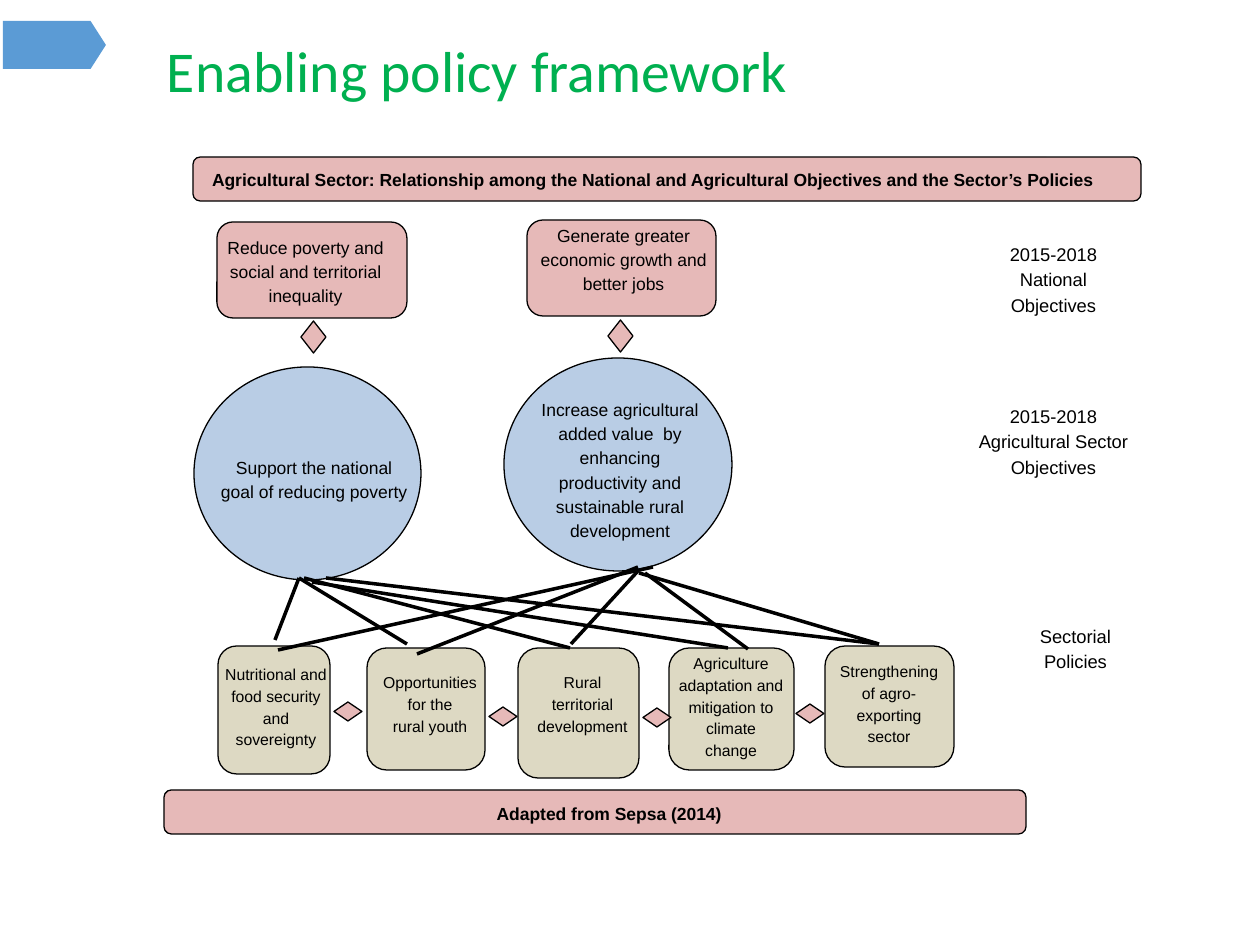
from dataclasses import dataclass

from pptx import Presentation
from pptx import util as u
from pptx.dml.color import RGBColor
from pptx.enum import shapes as sh, text as tx
from pptx.oxml.ns import qn

SCALE = 914400 / 126  # EMU in one px
ROSE, BLUE, SAND, BLACK = "E6B9B8", "B9CDE5", "DDD9C3", "000000"
ROUND = sh.MSO_SHAPE.ROUNDED_RECTANGLE
OVAL = sh.MSO_SHAPE.OVAL
DIAMOND = sh.MSO_SHAPE.DIAMOND

Rect = tuple[int, int, int, int]


@dataclass
class Node:
    kind: int
    fill: str
    at: Rect
    box: Rect
    words: list[str]
    size: float = 10
    bold: bool = False
    wrap: bool = False
    align: tx.PP_ALIGN = tx.PP_ALIGN.CENTER


@dataclass
class Label:
    box: Rect
    words: list[str]


def px(n: int) -> u.Emu:
    return u.Emu(round(n * SCALE))


def place(at: Rect) -> list[u.Emu]:
    return [px(n) for n in at]


def tint(code: str) -> RGBColor:
    return RGBColor.from_string(code)


def write(frame, words: list[str], *, size: float, font="Arial", color=BLACK,
          bold=False, align=tx.PP_ALIGN.CENTER, wrap=True, lead=1.15, inset=(0, 0)) -> None:
    frame.word_wrap = wrap
    frame.auto_size = tx.MSO_AUTO_SIZE.NONE
    frame.vertical_anchor = tx.MSO_ANCHOR.TOP
    frame.margin_left = frame.margin_right = px(inset[0])
    frame.margin_top = frame.margin_bottom = px(inset[1])
    for i, line in enumerate(words):
        para = frame.add_paragraph() if i else frame.paragraphs[0]
        para.text = line
        para.alignment = align
        para.line_spacing = lead
        para.font.name = font
        para.font.size = u.Pt(size)
        para.font.bold = bold
        para.font.color.rgb = tint(color)


def draw(slide, kind: int, at: Rect, fill: str, edge: bool = True):
    shape = slide.shapes.add_shape(kind, *place(at))
    shape.shadow.inherit = False
    shape.fill.solid()
    shape.fill.fore_color.rgb = tint(fill)
    if edge:
        shape.line.color.rgb = tint(BLACK)
        shape.line.width = u.Pt(0)
    else:
        shape.line.fill.background()
    return shape


def add_node(slide, node: Node) -> None:
    draw(slide, node.kind, node.at, node.fill)
    box = slide.shapes.add_textbox(*place(node.box))
    write(box.text_frame, node.words, size=node.size, bold=node.bold,
          wrap=node.wrap, align=node.align)


def add_label(slide, label: Label) -> None:
    box = slide.shapes.add_textbox(*place(label.box))
    write(box.text_frame, label.words, size=10.5, inset=(13, 6))


def add_link(slide, ends: Rect) -> None:
    link = slide.shapes.add_connector(sh.MSO_CONNECTOR.STRAIGHT, *place(ends))
    link.line.color.rgb = tint(BLACK)
    link.line.width = u.Pt(0)
    props = link._element.spPr
    props.append(props.makeelement(qn("a:effectLst"), {}))


NODES = [
    # National objectives
    Node(ROUND, ROSE, (217, 222, 190, 96), (226, 234, 159, 81),
         ["Reduce poverty and", "social and territorial", "inequality"]),
    Node(ROUND, ROSE, (527, 220, 189, 96), (539, 222, 169, 93),
         ["Generate greater economic growth and better jobs"], wrap=True),
    # Sector objectives
    Node(OVAL, BLUE, (194, 367, 227, 213), (217, 454, 194, 83),
         ["Support the national", "goal of reducing poverty"]),
    Node(OVAL, BLUE, (504, 358, 228, 213), (524, 396, 192, 160),
         ["Increase agricultural", "added value  by enhancing",
          "productivity and sustainable rural development"], wrap=True),
    # Sector policies
    Node(ROUND, SAND, (218, 646, 112, 128), (226, 662, 100, 102),
         ["Nutritional and", "food security", "and", "sovereignty"], 9),
    Node(ROUND, SAND, (367, 648, 118, 122), (384, 670, 92, 102),
         ["Opportunities", "for the", "rural youth"], 9),
    Node(ROUND, SAND, (518, 648, 121, 130), (536, 670, 93, 83),
         ["Rural", "territorial", "development"], 9),
    Node(ROUND, SAND, (669, 648, 125, 122), (676, 651, 110, 110),
         ["Agriculture", "adaptation and", "mitigation to", "climate", "change"], 9),
    Node(ROUND, SAND, (825, 646, 129, 121), (835, 659, 108, 88),
         ["Strengthening", "of agro-", "exporting", "sector"], 9),
    # Bars above and below
    Node(ROUND, ROSE, (193, 157, 948, 44), (212, 166, 915, 43),
         ["Agricultural Sector: Relationship among the National and Agricultural "
          "Objectives and the Sector’s Policies"],
         bold=True, wrap=True, align=tx.PP_ALIGN.LEFT),
    Node(ROUND, ROSE, (164, 790, 862, 44), (493, 800, 232, 23),
         ["Adapted from Sepsa (2014)"], bold=True),
]

LABELS = [
    Label((940, 234, 227, 115), ["2015-2018", "National", "Objectives"]),
    Label((940, 396, 227, 115), ["2015-2018", "Agricultural Sector Objectives"]),
    Label((978, 616, 195, 90), ["Sectorial", "Policies"]),
]

TALL = [(301, 321), (608, 320)]
FLAT = [(334, 702), (489, 707), (643, 708), (796, 704)]

LINKS = [
    # From the poverty goal
    (299, 578, 275, 640), (299, 578, 407, 644), (304, 578, 570, 648),
    (312, 582, 728, 648), (326, 578, 879, 644),
    # From the added value goal
    (639, 573, 879, 644), (645, 573, 748, 649), (638, 571, 571, 644),
    (638, 567, 417, 654), (653, 567, 278, 650),
]


def main() -> None:
    deck = Presentation()
    deck.slide_width, deck.slide_height = px(1260), px(945)
    slide = deck.slides.add_slide(deck.slide_layouts[5])

    # Title and corner tag
    title = slide.shapes.title
    title.left, title.top, title.width, title.height = place((154, 29, 801, 83))
    write(title.text_frame, ["Enabling policy framework"], size=33, font="Calibri",
          color="00B050", align=tx.PP_ALIGN.LEFT, lead=1.0, inset=(13, 6))
    tag = draw(slide, sh.MSO_SHAPE.PENTAGON, (3, 21, 103, 48), "5B9BD5", edge=False)
    tag.adjustments[0] = 0.32

    # Diagram
    for node in NODES:
        add_node(slide, node)
    for x, y in TALL:
        draw(slide, DIAMOND, (x, y, 25, 32), ROSE)
    for x, y in FLAT:
        draw(slide, DIAMOND, (x, y, 28, 19), ROSE)
    for ends in LINKS:
        add_link(slide, ends)
    for label in LABELS:
        add_label(slide, label)

    deck.save("out.pptx")


if __name__ == "__main__":
    main()
